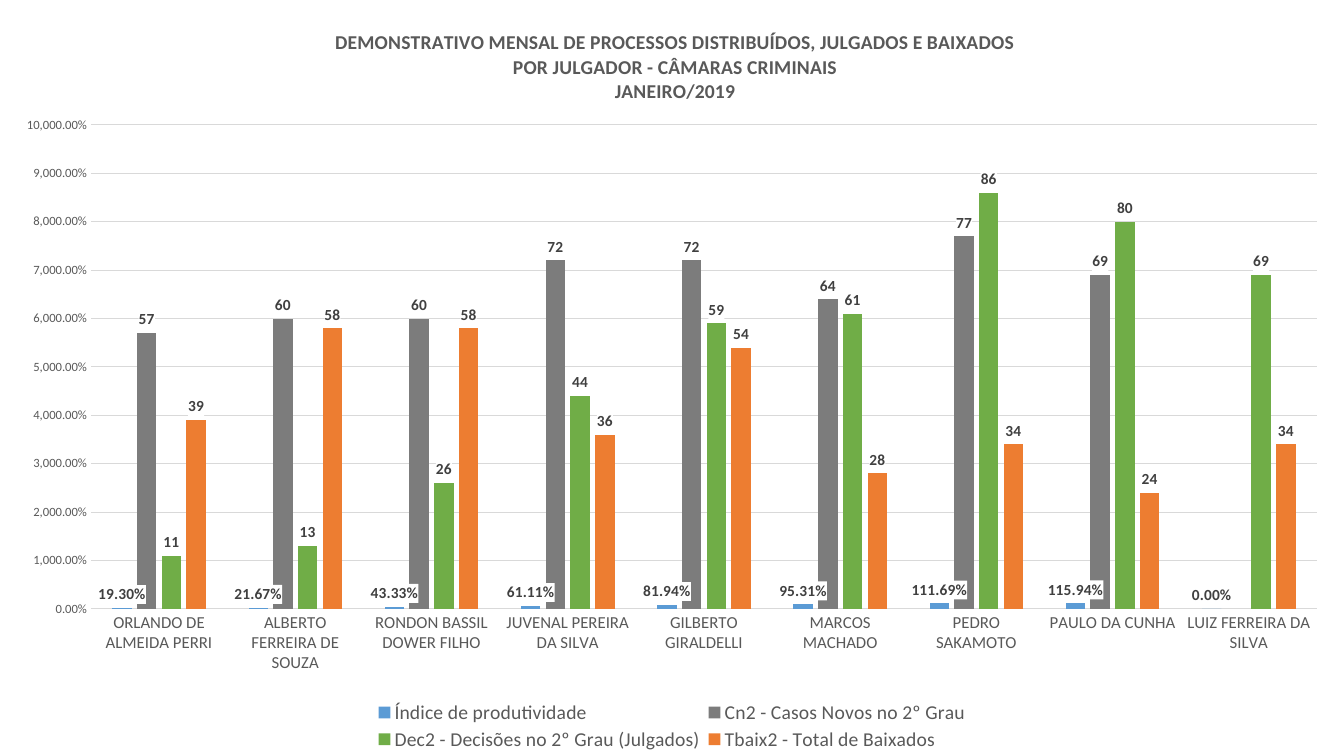
from lxml.etree import SubElement
from pptx import Presentation
from pptx.chart.data import CategoryChartData
from pptx.dml.color import RGBColor
from pptx.enum.chart import XL_CHART_TYPE, XL_LABEL_POSITION, XL_LEGEND_POSITION, XL_TICK_MARK
from pptx.oxml import parse_xml
from pptx.oxml.ns import nsdecls, qn
from pptx.util import Emu, Pt

EMU_PER_PX = 914400 / 100.8
PAGE_BOX = (0, 0, 1344, 756)
TITLE_BOX = (332, 26, 680, 72)
PLOT_BOX = (91, 125, 1226, 484)
LEGEND_BOX = (370, 698, 604, 56)

BLACK = RGBColor(0x00, 0x00, 0x00)
DARK = RGBColor(0x40, 0x40, 0x40)
GREY = RGBColor(0x59, 0x59, 0x59)
LIGHT = RGBColor(0xD9, 0xD9, 0xD9)
BLUE = RGBColor(0x5B, 0x9B, 0xD5)
STEEL = RGBColor(0x7C, 0x7C, 0x7C)
GREEN = RGBColor(0x70, 0xAD, 0x47)
ORANGE = RGBColor(0xED, 0x7D, 0x31)

PERCENT = "#,##0.00%"
TITLE_LINES = [
    "DEMONSTRATIVO MENSAL DE PROCESSOS DISTRIBUÍDOS, JULGADOS E BAIXADOS",
    "POR JULGADOR - CÂMARAS CRIMINAIS",
    "JANEIRO/2019",
]
JUDGES = [
    "ORLANDO DE ALMEIDA PERRI", "ALBERTO FERREIRA DE SOUZA", "RONDON BASSIL DOWER FILHO",
    "JUVENAL PEREIRA DA SILVA", "GILBERTO GIRALDELLI", "MARCOS MACHADO",
    "PEDRO SAKAMOTO", "PAULO DA CUNHA", "LUIZ FERREIRA DA SILVA",
]
SERIES = [
    ("Índice de produtividade", BLUE, PERCENT,
     [0.193, 0.2167, 0.4333, 0.6111, 0.8194, 0.9531, 1.1169, 1.1594, 0]),
    ("Cn2 - Casos Novos no 2º Grau", STEEL, "General",
     [57, 60, 60, 72, 72, 64, 77, 69, None]),
    ("Dec2 - Decisões no 2º Grau (Julgados)", GREEN, "General",
     [11, 13, 26, 44, 59, 61, 86, 80, 69]),
    ("Tbaix2 - Total de Baixados", ORANGE, "General",
     [39, 58, 58, 36, 54, 28, 34, 24, 34]),
]


def px(length):
    return Emu(round(length * EMU_PER_PX))


def apply(target, **values):
    for name, value in values.items():
        setattr(target, name, value)


def style_font(font, size, color, bold=False):
    apply(font, name="Calibri", size=Pt(size), bold=bold)
    font.color.rgb = color


def style_line(line, color):
    line.color.rgb = color
    line.width = Pt(0.75)


def set_layout(element, index, box, frame, inner=False):
    """Pin a chart part to a px box, as fractions of the chart frame."""
    for old in element.findall(qn("c:layout")):
        element.remove(old)
    layout = parse_xml(f"<c:layout {nsdecls('c')}><c:manualLayout/></c:layout>")
    manual = layout[0]
    if inner:
        SubElement(manual, qn("c:layoutTarget"), val="inner")
    for mode in ("xMode", "yMode"):
        SubElement(manual, qn(f"c:{mode}"), val="edge")
    left, top, width, height = frame
    fractions = ((box[0] - left) / width, (box[1] - top) / height,
                 box[2] / width, box[3] / height)
    for name, fraction in zip("xywh", fractions):
        SubElement(manual, qn(f"c:{name}"), val=f"{fraction:.4f}")
    element.insert(index, layout)


def add_title(chart, frame):
    text = chart.chart_title.text_frame
    for number, line in enumerate(TITLE_LINES):
        para = text.add_paragraph() if number else text.paragraphs[0]
        span = para.add_run()
        span.text = line
        style_font(span.font, 14, GREY, True)
    set_layout(chart.chart_title._element, 1, TITLE_BOX, frame)


def style_axes(chart):
    judges, values = chart.category_axis, chart.value_axis
    for axis, size in ((judges, 12), (values, 9)):
        apply(axis, major_tick_mark=XL_TICK_MARK.NONE, minor_tick_mark=XL_TICK_MARK.NONE)
        style_font(axis.tick_labels.font, size, GREY)
    style_line(judges.format.line, LIGHT)
    apply(values, minimum_scale=0, maximum_scale=100, major_unit=10, has_major_gridlines=True)
    values.format.line.fill.background()
    style_line(values.major_gridlines.format.line, LIGHT)
    apply(values.tick_labels, number_format=PERCENT, number_format_is_linked=False)


def style_series(series, color, number_format):
    series.format.fill.solid()
    series.format.fill.fore_color.rgb = color
    series.invert_if_negative = False
    labels = series.data_labels
    apply(labels, show_value=True, number_format=number_format,
          number_format_is_linked=False, position=XL_LABEL_POSITION.OUTSIDE_END)
    style_font(labels.font, 11, DARK, True)
    white_box = parse_xml(
        f"<c:spPr {nsdecls('c', 'a')}><a:solidFill><a:srgbClr val='FFFFFF'/></a:solidFill></c:spPr>")
    labels._element.find(qn("c:txPr")).addprevious(white_box)


def add_legend(chart, frame):
    chart.has_legend = True
    apply(chart.legend, position=XL_LEGEND_POSITION.BOTTOM, include_in_layout=False)
    style_font(chart.legend.font, 14, GREY)
    set_layout(chart.legend._element, 1, LEGEND_BOX, frame)


def add_productivity_chart(page, frame):
    data = CategoryChartData()
    data.categories = JUDGES
    for name, _, number_format, values in SERIES:
        data.add_series(name, values, number_format)
    chart = page.shapes.add_chart(
        XL_CHART_TYPE.COLUMN_CLUSTERED, *map(px, frame), data).chart
    style_font(chart.font, 10, BLACK)
    add_title(chart, frame)
    style_axes(chart)
    plot = chart.plots[0]
    apply(plot, gap_width=219, overlap=-27, vary_by_categories=False)
    for series, (_, color, number_format, _) in zip(plot.series, SERIES):
        style_series(series, color, number_format)
    add_legend(chart, frame)
    plot_area = chart._chartSpace.chart.plotArea
    set_layout(plot_area, 0, PLOT_BOX, frame, inner=True)


def main():
    deck = Presentation()
    apply(deck, slide_width=px(PAGE_BOX[2]), slide_height=px(PAGE_BOX[3]))
    page = deck.slides.add_slide(deck.slide_layouts[6])
    add_productivity_chart(page, PAGE_BOX)
    deck.save("out.pptx")


if __name__ == "__main__":
    main()
